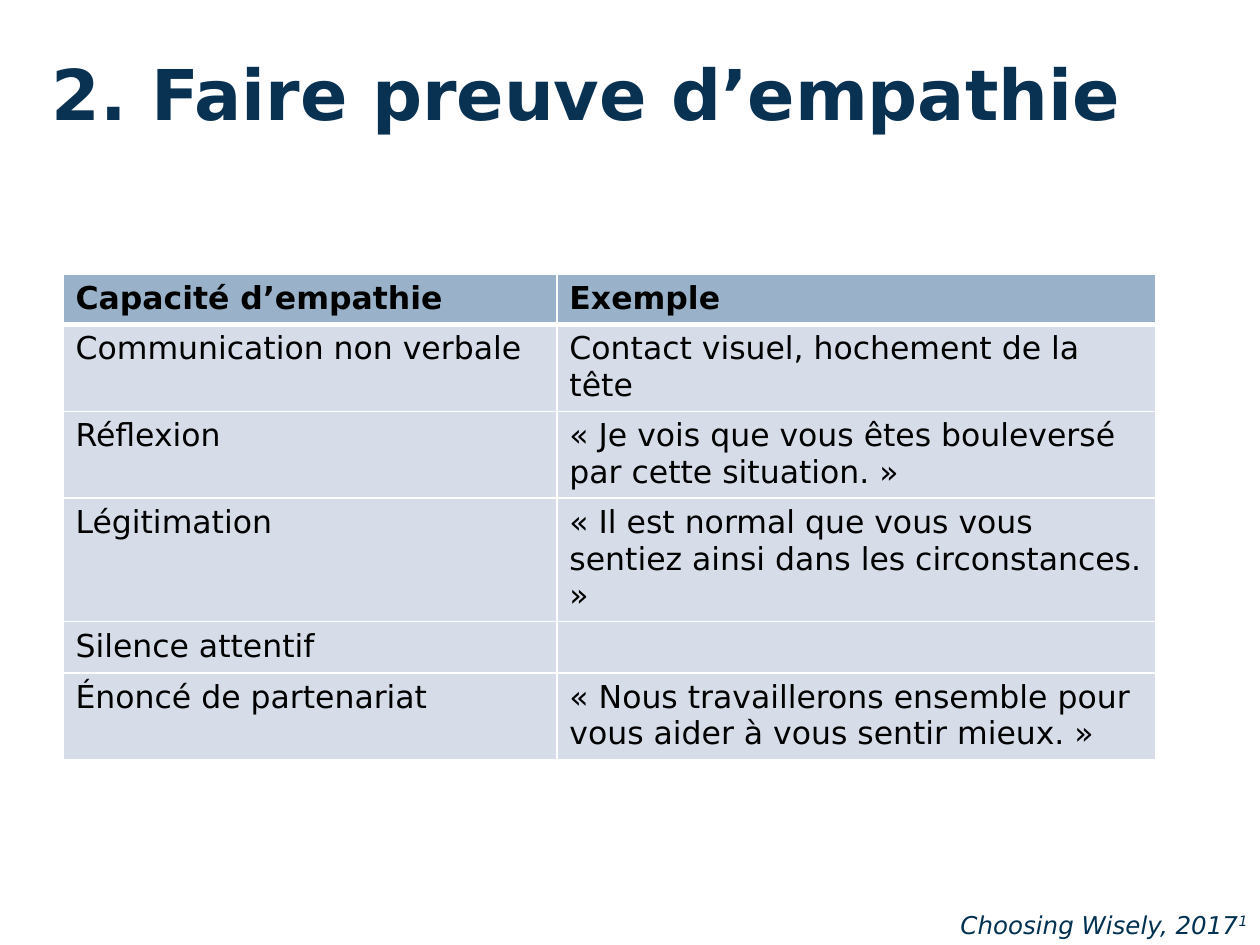
from lxml import etree
from pptx import Presentation
from pptx.dml.color import RGBColor
from pptx.enum.text import MSO_ANCHOR, MSO_AUTO_SIZE, PP_ALIGN
from pptx.oxml.ns import qn
from pptx.util import Inches, Pt

BOTTOM, TOP = MSO_ANCHOR.BOTTOM, MSO_ANCHOR.TOP
CENTER, RIGHT = PP_ALIGN.CENTER, PP_ALIGN.RIGHT
GROW = MSO_AUTO_SIZE.SHAPE_TO_FIT_TEXT

WIDTH, HEIGHT = 10, 7.5
FONT = "DejaVu Sans"
COLORS = {
    "title": "093152",
    "note": "003152",
    "text": "000000",
    "head": "557FA6",
    "body": "BBC7D9",
    "rule": "FFFFFF",
}
OPACITY = 60

COLS = [3.92, 4.75]
LINE, PAD = 0.29, 0.11
# Each row: lines of text, left cell, right cell
ROWS = [
    (1, "Capacité d’empathie", "Exemple"),
    (2, "Communication non verbale", "Contact visuel, hochement de la tête"),
    (2, "Réflexion", "« Je vois que vous êtes bouleversé par cette situation. »"),
    (3, "Légitimation",
     "« Il est normal que vous vous sentiez ainsi dans les circonstances. »"),
    (1, "Silence attentif", ""),
    (2, "Énoncé de partenariat",
     "« Nous travaillerons ensemble pour vous aider à vous sentir mieux. »"),
]


class Deck:
    def __init__(self):
        self.file = Presentation()
        self.file.slide_width = Inches(WIDTH)
        self.file.slide_height = Inches(HEIGHT)
        self.slide = self.file.slides.add_slide(self.file.slide_layouts[6])

    def place(self, x, y, w, h):
        """Turn shares of the slide's size into lengths."""
        return (Inches(x * WIDTH), Inches(y * HEIGHT),
                Inches(w * WIDTH), Inches(h * HEIGHT))

    def style(self, run, size, color, bold=False, italic=False):
        font = run.font
        font.name, font.size = FONT, Pt(size)
        font.bold, font.italic = bold, italic
        font.color.rgb = RGBColor.from_string(COLORS[color])

    def text(self, box, words, size, color, align, anchor=TOP, **look):
        frame = self.slide.shapes.add_textbox(*self.place(*box)).text_frame
        frame.word_wrap = True
        frame.vertical_anchor = anchor
        frame.text = words
        para = frame.paragraphs[0]
        para.alignment = align
        self.style(para.runs[0], size, color, **look)
        return frame

    def raised(self, para, words, size, color, **look):
        """Add a superscript run."""
        run = para.add_run()
        run.text = words
        self.style(run, size, color, **look)
        run.font._element.set("baseline", "30000")

    def edges(self, cell, base):
        props = cell._tc.get_or_add_tcPr()
        widths = {"lnL": 1, "lnR": 1, "lnT": 1, "lnB": base}
        for spot, (side, width) in enumerate(widths.items()):
            line = etree.Element(qn(f"a:{side}"), w=str(Pt(width)))
            fill = etree.SubElement(line, qn("a:solidFill"))
            etree.SubElement(fill, qn("a:srgbClr"), val=COLORS["rule"])
            props.insert(spot, line)

    def tint(self, cell, color):
        cell.fill.solid()
        cell.fill.fore_color.rgb = RGBColor.from_string(COLORS[color])
        tone = cell._tc.tcPr.find(".//" + qn("a:srgbClr"))
        etree.SubElement(tone, qn("a:alpha"), val=str(OPACITY * 1000))

    def table(self, x, y, rows, cols, size):
        tall = [count * LINE + PAD for count, *_ in rows]
        box = self.place(x, y, sum(cols) / WIDTH, sum(tall) / HEIGHT)
        grid = self.slide.shapes.add_table(len(rows), len(cols), *box).table
        for col, width in zip(grid.columns, cols):
            col.width = Inches(width)
        for r, (_, *cells) in enumerate(rows):
            grid.rows[r].height = Inches(tall[r])
            head = r == 0
            for c, words in enumerate(cells):
                cell = grid.cell(r, c)
                self.tint(cell, "head" if head else "body")
                # The rule under the header is heavy on both sides of it
                self.edges(cell, 3 if head else 1)
                if r == 1:
                    cell._tc.tcPr.find(qn("a:lnT")).set("w", str(Pt(3)))
                cell.text_frame.text = words
                for run in cell.text_frame.paragraphs[0].runs:
                    self.style(run, size, "text", bold=head)


def main():
    deck = Deck()
    deck.table(0.05, 0.29, ROWS, COLS, 18)

    note = deck.text((0.61, 0.956, 0.39, 0.045), "Choosing Wisely, 2017",
                     14, "note", RIGHT, italic=True)
    note.auto_size = GROW
    deck.raised(note.paragraphs[0], "1", 14, "note", italic=True)

    title = deck.text((0.02, 0.02, 0.89, 0.13), "2. Faire preuve d’empathie",
                      40, "title", CENTER, BOTTOM, bold=True)
    title.paragraphs[0].line_spacing = 0.9

    deck.file.save("out.pptx")


if __name__ == "__main__":
    main()
